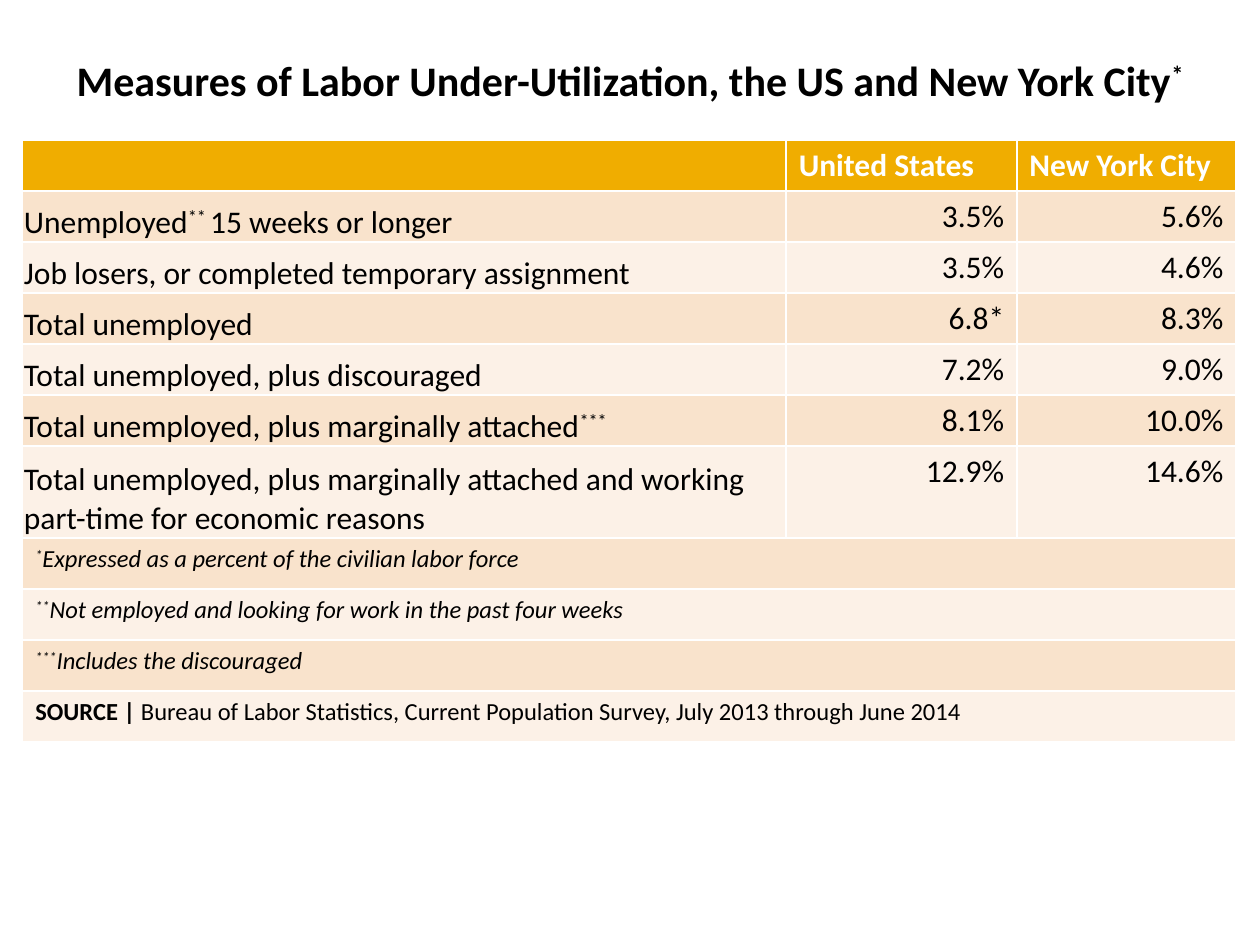
import pptx
import pptx.dml.color
import pptx.enum.text
import pptx.util

Inches = pptx.util.Inches
Pt = pptx.util.Pt
ALIGN = pptx.enum.text.PP_ALIGN
ANCHOR = pptx.enum.text.MSO_ANCHOR

COLORS = {
    "header": "F0AD00",
    "dark_band": "F9E3CC",
    "light_band": "FCF1E7",
    "header_text": "FFFFFF",
    "text": "000000",
}


def add_run(paragraph, text, size, color="text", bold=False, italic=False, raised=False):
    run = paragraph.add_run()
    run.text = text
    run.font.name = "Calibri"
    run.font.size = Pt(size)
    run.font.bold = bold
    run.font.italic = italic
    run.font.color.rgb = pptx.dml.color.RGBColor.from_string(COLORS[color])
    if raised:
        run.font._element.set("baseline", "30000")


def fill_cell(cell, color):
    cell.fill.solid()
    cell.fill.fore_color.rgb = pptx.dml.color.RGBColor.from_string(COLORS[color])


prs = pptx.Presentation()
prs.slide_width = Inches(10)
prs.slide_height = Inches(7.5)
slide = prs.slides.add_slide(prs.slide_layouts[5])

title = slide.shapes.title
title.left, title.top = Inches(0), Inches(0.38)
title.width, title.height = Inches(10), Inches(0.5)
title.text_frame.word_wrap = True
title.text_frame.auto_size = pptx.enum.text.MSO_AUTO_SIZE.SHAPE_TO_FIT_TEXT
title.text_frame.vertical_anchor = ANCHOR.TOP
heading = title.text_frame.paragraphs[0]
heading.alignment = ALIGN.CENTER
add_run(heading, "Measures of Labor Under-Utilization, the US and New York City", 24, bold=True)
add_run(heading, "*", 24, bold=True, raised=True)

regions = ["United States", "New York City"]
measures = [
    ([("Unemployed", False), ("** ", True), ("15 weeks or longer", False)], "3.5%", "5.6%"),
    ([("Job losers, or completed temporary assignment", False)], "3.5%", "4.6%"),
    ([("Total unemployed", False)], "6.8*", "8.3%"),
    ([("Total unemployed, plus discouraged", False)], "7.2%", "9.0%"),
    ([("Total unemployed, plus marginally attached", False), ("***", True)], "8.1%", "10.0%"),
    ([("Total unemployed, plus marginally attached and working part-time for economic reasons", False)],
     "12.9%", "14.6%"),
]
footnotes = [
    ("*", "Expressed as a percent of the civilian labor force"),
    ("**", "Not employed and looking for work in the past four weeks"),
    ("***", "Includes the discouraged"),
]

row_count = 1 + len(measures) + len(footnotes) + 1
table_height, tall_row_height = 4.78, 0.73
row_height = (table_height - tall_row_height) / (row_count - 1)
table = slide.shapes.add_table(
    row_count, 3, Inches(0.18), Inches(1.11), Inches(9.63), Inches(table_height)
).table
for column, width in zip(table.columns, [6.06, 1.83, 1.74]):
    column.width = Inches(width)
for row in table.rows:
    row.height = Inches(row_height)
table.rows[len(measures)].height = Inches(tall_row_height)

for row_index, row in enumerate(table.rows):
    band = "header" if row_index == 0 else "dark_band" if row_index % 2 else "light_band"
    for cell in row.cells:
        fill_cell(cell, band)

for column_index, region in enumerate(regions, 1):
    region_line = table.cell(0, column_index).text_frame.paragraphs[0]
    add_run(region_line, region, 18, "header_text", bold=True)

for row_index, (label_parts, *rates) in enumerate(measures, 1):
    label = table.cell(row_index, 0)
    label.vertical_anchor = ANCHOR.BOTTOM
    label.margin_left = label.margin_top = label.margin_right = Inches(0.01)
    label.margin_bottom = Inches(0)
    for text, raised in label_parts:
        add_run(label.text_frame.paragraphs[0], text, 18, raised=raised)
    for column_index, rate in enumerate(rates, 1):
        rate_line = table.cell(row_index, column_index).text_frame.paragraphs[0]
        rate_line.alignment = ALIGN.RIGHT
        add_run(rate_line, rate, 18)

first_note_row = 1 + len(measures)
for row_index in range(first_note_row, row_count):
    table.cell(row_index, 0).merge(table.cell(row_index, 2))

for row_index, (mark, note) in enumerate(footnotes, first_note_row):
    note_line = table.cell(row_index, 0).text_frame.paragraphs[0]
    add_run(note_line, mark, 14, italic=True, raised=True)
    add_run(note_line, note, 14, italic=True)

source_line = table.cell(row_count - 1, 0).text_frame.paragraphs[0]
add_run(source_line, "SOURCE | ", 14, bold=True)
add_run(source_line, "Bureau of Labor Statistics, Current Population Survey, July 2013 through June 2014", 14)

prs.save("out.pptx")
